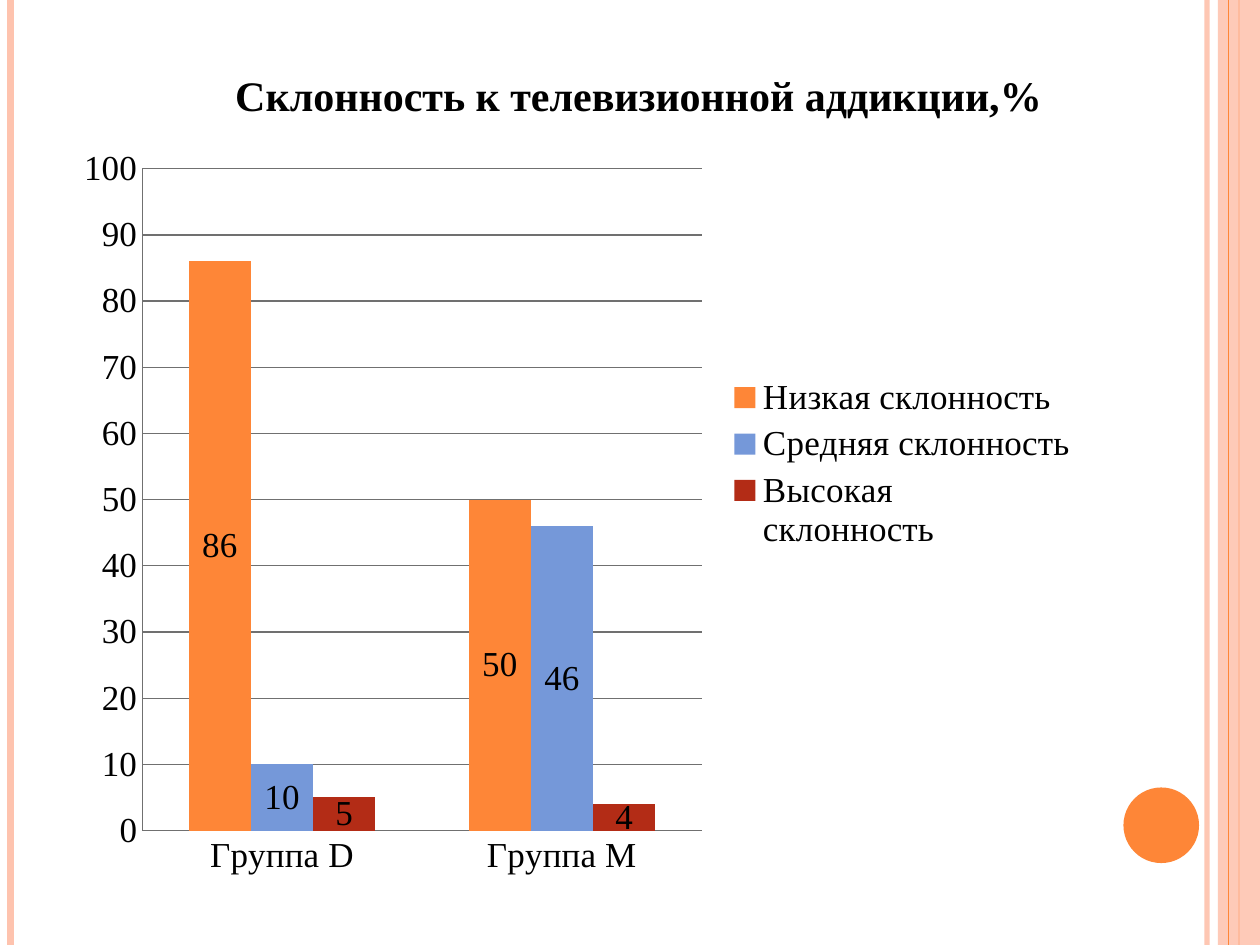
from dataclasses import dataclass

from lxml import etree
from pptx import Presentation
from pptx import util as u
from pptx.chart import data
from pptx.dml.color import RGBColor
from pptx.enum import chart as charts, shapes
from pptx.oxml import parse_xml
from pptx.oxml.ns import nsdecls, qn


@dataclass(frozen=True)
class Theme:
    font: str = "Times New Roman"
    title_size: int = 24
    chart_size: int = 20
    text: str = "000000"
    grid: str = "707070"
    pale: str = "FEC3AE"
    orange: str = "FE8637"
    blue: str = "7598D9"
    red: str = "B32C16"


THEME = Theme()
WIDTH, HEIGHT = 720, 540


def color(value):
    return RGBColor.from_string(value)


def set_opacity(owner, percent):
    """Make the colour found in an element partly transparent."""
    fill = next(owner.iter(qn("a:srgbClr")))
    etree.SubElement(fill, qn("a:alpha")).set("val", str(percent * 1000))


def add_stripe(page, x, width, tint, opacity=100):
    line = page.shapes.add_connector(
        shapes.MSO_CONNECTOR.STRAIGHT, u.Pt(x), 0, u.Pt(x), u.Pt(HEIGHT))
    line.line.color.rgb = color(tint)
    line.line.width = u.Pt(width)
    properties = line._element.spPr
    etree.SubElement(properties, qn("a:effectLst"))
    if opacity < 100:
        set_opacity(properties, opacity)


def add_block(page, kind, left, top, width, height, tint, opacity=100):
    block = page.shapes.add_shape(
        kind, u.Pt(left), u.Pt(top), u.Pt(width), u.Pt(height))
    block.shadow.inherit = False
    block.fill.solid()
    block.fill.fore_color.rgb = color(tint)
    block.line.fill.background()
    if opacity < 100:
        set_opacity(block._element.spPr, opacity)


def style_font(font, size, bold=False):
    font.name = THEME.font
    font.size = u.Pt(size)
    font.bold = bold
    font.color.rgb = color(THEME.text)


def place(element, index, inner=False, **fractions):
    """Give a chart part a fixed place, in fractions of the chart."""
    for old in element.findall(qn("c:layout")):
        element.remove(old)
    target = '<c:layoutTarget val="inner"/>' if inner else ""
    modes = "".join(f'<c:{key}Mode val="edge"/>' for key in "xy")
    values = "".join(f'<c:{key} val="{val}"/>' for key, val in fractions.items())
    element.insert(index, parse_xml(
        f'<c:layout {nsdecls("c")}><c:manualLayout>{target}{modes}{values}'
        "</c:manualLayout></c:layout>"))


def style_axis(axis):
    axis.major_tick_mark = axis.minor_tick_mark = charts.XL_TICK_MARK.NONE
    axis.format.line.color.rgb = color(THEME.grid)
    axis.format.line.width = u.Pt(0.75)


def add_column_chart(page, title, groups, series, left, top, width, height):
    source = data.CategoryChartData()
    source.categories = groups
    for name, values, _ in series:
        source.add_series(name, values)
    chart = page.shapes.add_chart(
        charts.XL_CHART_TYPE.COLUMN_CLUSTERED,
        u.Pt(left), u.Pt(top), u.Pt(width), u.Pt(height), source).chart
    style_font(chart.font, THEME.chart_size)

    # Title and legend
    frame = chart.chart_title.text_frame
    frame.text = title
    style_font(frame.paragraphs[0].font, THEME.title_size, bold=True)
    chart.has_legend = True
    chart.legend.position = charts.XL_LEGEND_POSITION.RIGHT
    chart.legend.include_in_layout = False

    # Axes
    style_axis(chart.category_axis)
    axis = chart.value_axis
    style_axis(axis)
    axis.minimum_scale, axis.maximum_scale, axis.major_unit = 0, 100, 10
    axis.has_major_gridlines = True
    axis.major_gridlines.format.line.color.rgb = color(THEME.grid)
    axis.major_gridlines.format.line.width = u.Pt(0.75)

    # Columns
    plot = chart.plots[0]
    plot.gap_width, plot.overlap = 150, 0
    plot.vary_by_categories = False
    for column, (_, _, tint) in zip(plot.series, series):
        column.format.fill.solid()
        column.format.fill.fore_color.rgb = color(tint)
        labels = column.data_labels
        labels.show_value = True
        labels.position = charts.XL_LABEL_POSITION.CENTER
        style_font(labels.font, THEME.chart_size)

    # Places within the chart
    space = chart._chartSpace
    place(space.xpath("c:chart/c:title")[0], 1, x=0.16, y=0.03)
    place(space.xpath("c:chart/c:plotArea")[0], 0, inner=True,
          x=0.077, y=0.156, w=0.544, h=0.772)


def main():
    deck = Presentation()
    deck.slide_width, deck.slide_height = u.Pt(WIDTH), u.Pt(HEIGHT)
    page = deck.slides.add_slide(deck.slide_layouts[6])

    # Edge decoration
    add_stripe(page, 689.76, 3, THEME.pale, 93)
    add_stripe(page, 6, 4.5, THEME.pale)
    add_stripe(page, 708, 1.5, THEME.orange)
    add_block(page, shapes.MSO_SHAPE.RECTANGLE, 696, 0, 24, HEIGHT,
              THEME.pale, 87)
    add_stripe(page, 702, 0.75, THEME.orange)
    add_block(page, shapes.MSO_SHAPE.OVAL, 642, 450, 43.2, 43.2, THEME.orange)

    # Chart
    add_column_chart(
        page, "Склонность к телевизионной аддикции,%",
        ["Группа D", "Группа M"],
        [("Низкая склонность", (86, 50), THEME.orange),
         ("Средняя склонность", (10, 46), THEME.blue),
         ("Высокая склонность", (5, 4), THEME.red)],
        36, 20, 588, 490)

    deck.save("out.pptx")


if __name__ == "__main__":
    main()
